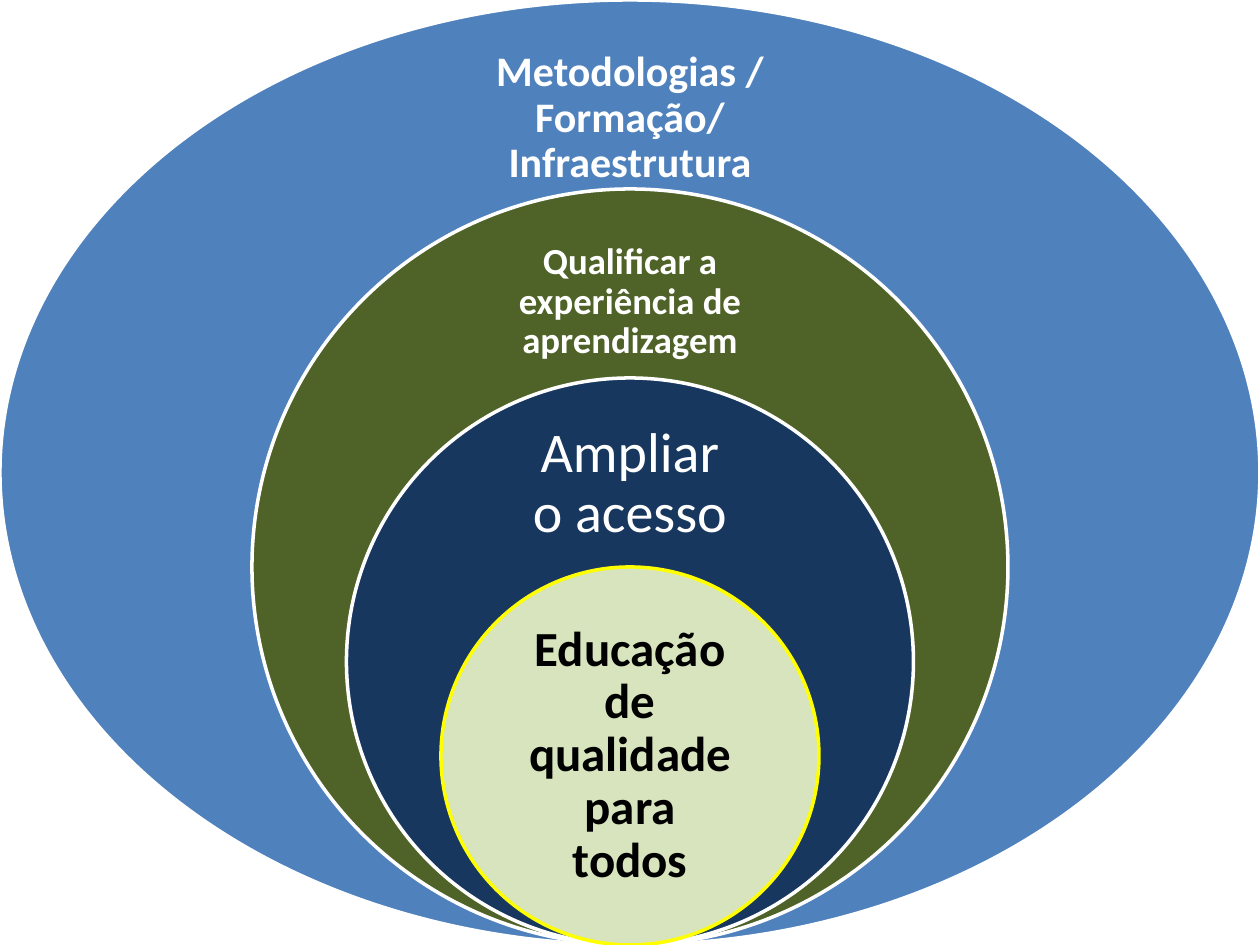
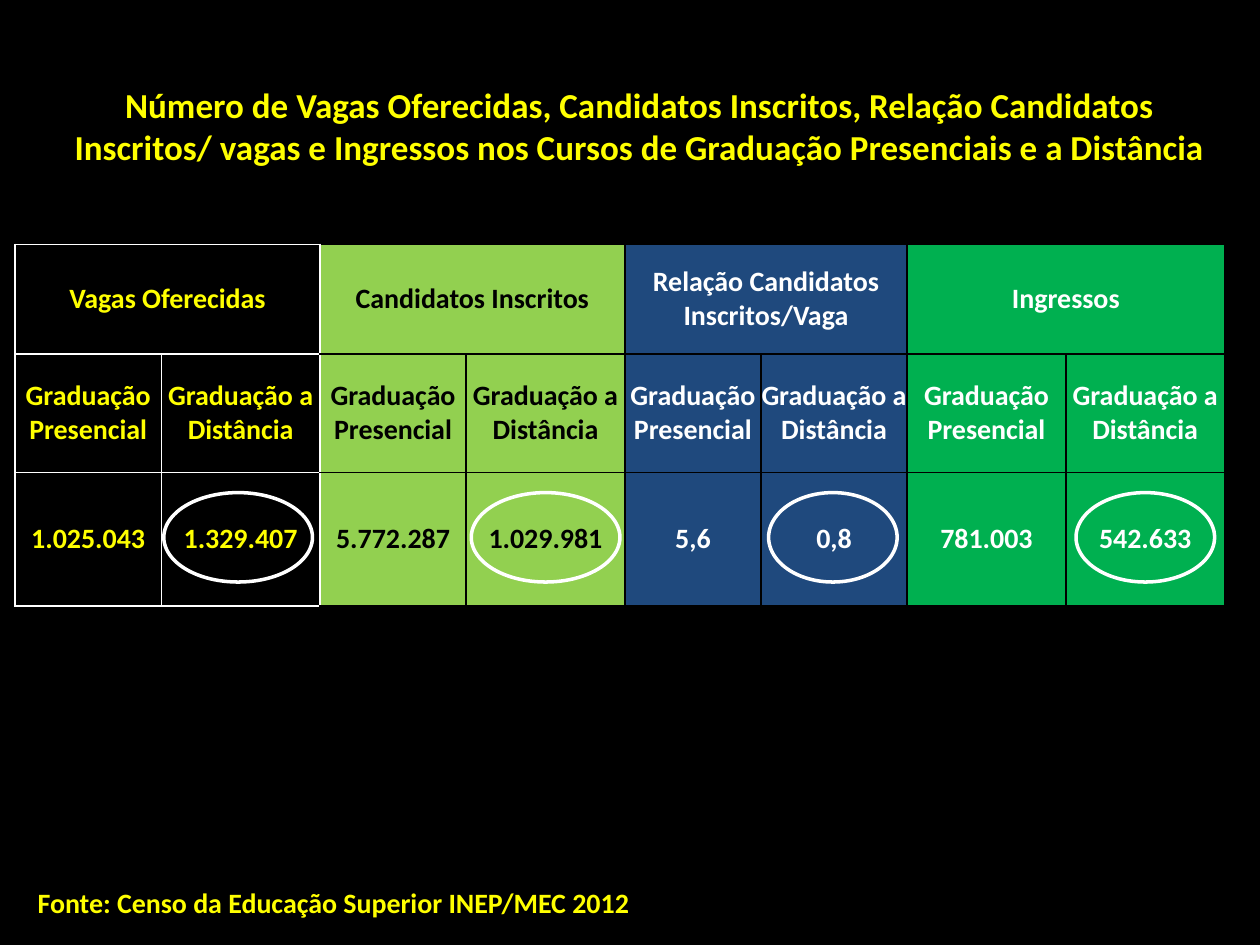
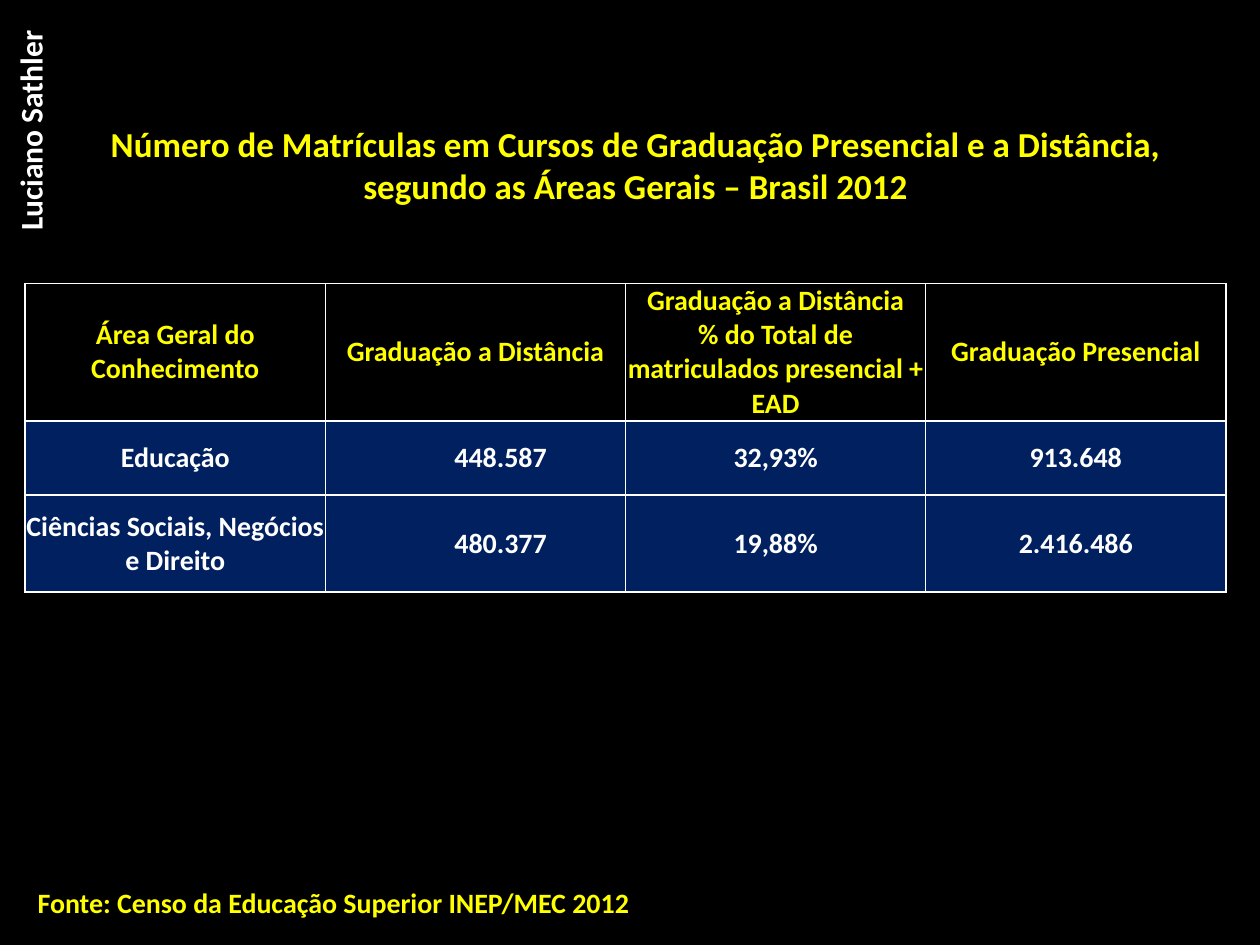
from lxml import etree
from pptx import Presentation
from pptx.dml.color import RGBColor
from pptx.enum.shapes import MSO_SHAPE as SHAPE
from pptx.enum.text import MSO_ANCHOR as ANCHOR, MSO_AUTO_SIZE as AUTO, PP_ALIGN as ALIGN
from pptx.oxml.ns import qn
from pptx.util import Inches, Pt

COLORS = {
    "white": "FFFFFF", "black": "000000", "yellow": "FFFF00",
    "blue": "4F81BD", "olive": "4F6228", "navy": "17375E", "pale": "D7E4BD",
    "lime": "92D050", "steel": "1F497D", "green": "00B050", "deep": "002060",
}
RGB = {name: RGBColor.from_string(value) for name, value in COLORS.items()}
SOURCE = "Fonte: Censo da Educação Superior INEP/MEC 2012"
DATA_SLIDES = [
    ("Número de Vagas Oferecidas, Candidatos Inscritos, Relação Candidatos "
     "Inscritos/ vagas e Ingressos nos Cursos de Graduação Presenciais e a Distância",
     (0.35, 0.61, 9.45, 0.77)),
    ("Número de Matrículas em Cursos de Graduação Presencial e a Distância, "
     "segundo as Áreas Gerais – Brasil 2012",
     (0.28, 0.92, 9.53, 0.77)),
]


def write(tf, text, size, color, bold=True, align=ALIGN.CENTER, spacing=None):
    for i, line in enumerate(text.split("\n")):
        p = tf.add_paragraph() if i else tf.paragraphs[0]
        p.alignment, p.line_spacing = align, spacing
        r = p.add_run()
        r.text = line
        for key, value in {"name": "Calibri", "size": Pt(size), "bold": bold}.items():
            setattr(r.font, key, value)
        r.font.color.rgb = RGB[color]


def fill_cell(cell, text, fill, color, edges):
    for key in ("margin_left", "margin_top", "margin_right", "margin_bottom"):
        setattr(cell, key, 0)
    cell.vertical_anchor = ANCHOR.MIDDLE
    cell.fill.solid()
    cell.fill.fore_color.rgb = RGB[fill]
    tcPr = cell._tc.get_or_add_tcPr()
    for i, (side, edge) in enumerate(zip("LRTB", edges)):
        ln = etree.Element(qn(f"a:ln{side}"), w=str(Pt(1)))
        solid = etree.SubElement(ln, qn("a:solidFill"))
        etree.SubElement(solid, qn("a:srgbClr"), val=COLORS[edge])
        tcPr.insert(i, ln)
    if text:
        write(cell.text_frame, text, 16, color)


prs = Presentation()
prs.slide_width, prs.slide_height = Inches(10), Inches(7.5)

s = prs.slides.add_slide(prs.slide_layouts[6])
rings = [
    (10, 7.5, "blue", "white", "Metodologias / Formação/ Infraestrutura",
     (3.6, 0.38, 2.8, 1.12), 0.19, 24, "white", True),
    (6, 6, "olive", "white", "Qualificar a experiência de aprendizagem",
     (3.95, 1.86, 2.1, 1.08), 0.16, 21, "white", True),
    (4.5, 4.5, "navy", "white", "Ampliar o acesso",
     (3.95, 3.34, 2.1, 1.01), 0.25, 32, "white", False),
    (3, 3, "pale", "yellow", "Educação de qualidade para todos",
     (3.94, 5.25, 2.12, 1.5), 0.22, 28, "black", True),
]
for w, h, fill, line, text, box, inset, size, color, bold in rings:
    sp = s.shapes.add_shape(SHAPE.OVAL, Inches((10 - w) / 2), Inches(7.5 - h), Inches(w), Inches(h))
    sp.shadow.inherit = False
    sp.fill.solid()
    sp.fill.fore_color.rgb = RGB[fill]
    sp.line.color.rgb = RGB[line]
    sp.line.width = Pt(2)
    tf = s.shapes.add_textbox(*map(Inches, box)).text_frame
    tf.word_wrap = True
    tf.vertical_anchor = ANCHOR.MIDDLE
    for key in ("margin_left", "margin_top", "margin_right", "margin_bottom"):
        setattr(tf, key, Inches(inset))
    write(tf, text, size, color, bold, spacing=0.9)

data_slides = []
for title, box in DATA_SLIDES:
    s = prs.slides.add_slide(prs.slide_layouts[5])
    s.background.fill.solid()
    s.background.fill.fore_color.rgb = RGB["black"]
    sp = s.shapes.title
    sp.left, sp.top, sp.width, sp.height = map(Inches, box)
    tf = sp.text_frame
    tf.word_wrap = True
    tf.auto_size = AUTO.NONE
    tf.vertical_anchor = ANCHOR.TOP
    write(tf, title, 20, "yellow")
    tf = s.shapes.add_textbox(Inches(0.2), Inches(6.98), Inches(9.06), Inches(0.37)).text_frame
    tf.word_wrap = True
    write(tf, SOURCE, 16, "yellow", align=ALIGN.LEFT)
    data_slides.append(s)
offers, enrolments = data_slides

groups = [
    ("Vagas Oferecidas", "black", "yellow", ("1.025.043", "1.329.407")),
    ("Candidatos Inscritos", "lime", "black", ("5.772.287", "1.029.981")),
    ("Relação Candidatos Inscritos/Vaga", "steel", "white", ("5,6", "0,8")),
    ("Ingressos", "green", "white", ("781.003", "542.633")),
]
modes = ("Graduação Presencial", "Graduação a Distância")
widths = (1.16, 1.26, 1.16, 1.26, 1.08, 1.16, 1.26, 1.26)
heights = (0.87, 0.94, 1.06)
table = offers.shapes.add_table(3, 8, Inches(0.12), Inches(1.94),
                                Inches(sum(widths)), Inches(sum(heights))).table
table.first_row = table.horz_banding = False
for col, width in zip(table.columns, widths):
    col.width = Inches(width)
for row, height in zip(table.rows, heights):
    row.height = Inches(height)
for g, (name, fill, color, values) in enumerate(groups):
    edge = "black" if g else "white"
    for i in range(2):
        c = 2 * g + i
        left = "white" if c <= 2 else "black"
        for r, text in enumerate(("" if i else name, modes[i], values[i])):
            fill_cell(table.cell(r, c), text, fill, color, (left, edge, edge, edge))
    table.cell(0, 2 * g).merge(table.cell(0, 2 * g + 1))

for x, w in ((1.3, 1.18), (3.74, 1.18), (6.1, 1.02), (8.54, 1.1)):
    sp = offers.shapes.add_shape(SHAPE.OVAL, Inches(x), Inches(3.91), Inches(w), Inches(0.71))
    sp.shadow.inherit = False
    sp.fill.background()
    sp.line.color.rgb = RGB["white"]
    sp.line.width = Pt(2)

rows = [
    ("Área Geral do Conhecimento", "Graduação a Distância",
     "Graduação a Distância\n% do Total de matriculados presencial + EAD", "Graduação Presencial"),
    ("Educação", "448.587", "32,93%", "913.648"),
    ("Ciências Sociais, Negócios e Direito", "480.377", "19,88%", "2.416.486"),
]
heights = (1.09, 0.59, 0.77)
table = enrolments.shapes.add_table(3, 4, Inches(0.2), Inches(2.25),
                                    Inches(9.53), Inches(sum(heights))).table
table.first_row = table.horz_banding = False
for r, (texts, height) in enumerate(zip(rows, heights)):
    table.rows[r].height = Inches(height)
    fill, color = ("deep", "white") if r else ("black", "yellow")
    for c, text in enumerate(texts):
        fill_cell(table.cell(r, c), text, fill, color, ["white"] * 4)
    if r:
        table.cell(r, 1).margin_left = Inches(0.4)

sp = enrolments.shapes.add_textbox(Inches(-0.66), Inches(0.83), Inches(1.8), Inches(0.4))
sp.rotation = 270
sp.text_frame.word_wrap = False
write(sp.text_frame, "Luciano Sathler", 18, "white", align=ALIGN.LEFT)

prs.save("out.pptx")
